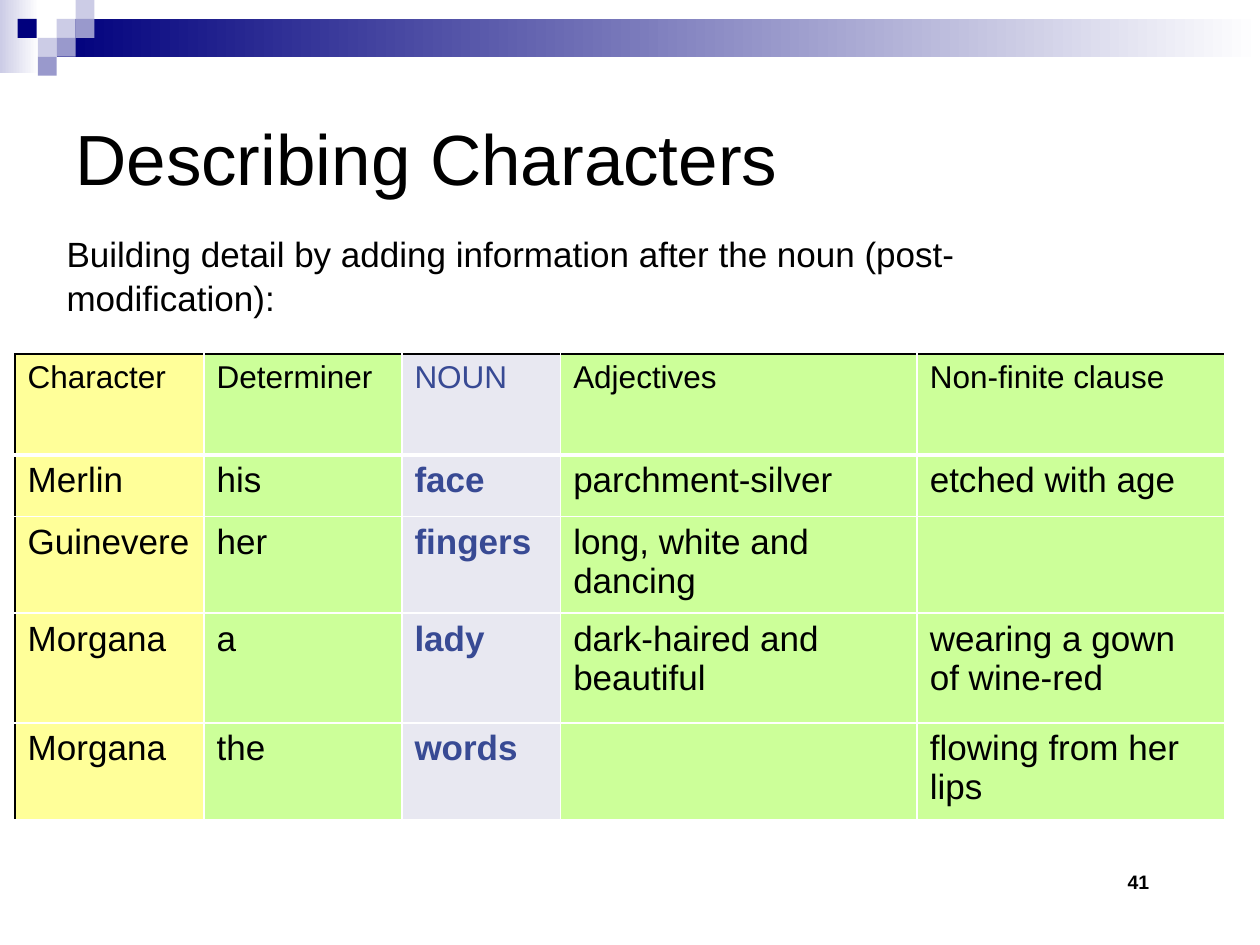
from lxml import etree
from pptx import Presentation
from pptx import util as u
from pptx.dml import color
from pptx.enum import shapes, text
from pptx.oxml import ns

BLACK, WHITE, NAVY, LILAC, LAVENDER = "000000", "FFFFFF", "00007D", "9999CC", "CCCCE6"
NOUN_BLUE, NOUN_FILL, YELLOW, GREEN = "384A94", "E8E8F1", "FFFF99", "CCFF99"
NOUN_COLUMN = 2


def rgb(value):
    return color.RGBColor.from_string(value)


class SlideBuilder:
    font_name = "Arial"

    def __init__(self, slide):
        self.slide = slide

    def style(self, paragraph, size, colour=BLACK, bold=False):
        font = paragraph.font
        font.name, font.size, font.bold = self.font_name, u.Pt(size), bold
        font.color.rgb = rgb(colour)

    def rectangle(self, left, top, width, height, *colours):
        shape = self.slide.shapes.add_shape(
            shapes.MSO_SHAPE.RECTANGLE, *map(u.Inches, (left, top, width, height)))
        shape.shadow.inherit = False
        shape.line.fill.background()
        if len(colours) == 1:
            shape.fill.solid()
            shape.fill.fore_color.rgb = rgb(colours[0])
        else:
            shape.fill.gradient()
            shape.fill.gradient_angle = 0
            for stop, colour in zip(shape.fill.gradient_stops, colours):
                stop.color.rgb = rgb(colour)

    def textbox(self, left, top, width, height, wording, size, bold=False,
                anchor=text.MSO_ANCHOR.TOP, line_spacing=1.0):
        shape = self.slide.shapes.add_textbox(*map(u.Inches, (left, top, width, height)))
        frame = shape.text_frame
        frame.word_wrap = True
        frame.vertical_anchor = anchor
        paragraph = frame.paragraphs[0]
        paragraph.text = wording
        paragraph.line_spacing = line_spacing
        self.style(paragraph, size, bold=bold)

    def borders(self, cell, edges):
        properties = cell._tc.get_or_add_tcPr()
        for index, (side, (colour, width)) in enumerate(edges.items()):
            line = etree.Element(ns.qn("a:ln" + side), w=str(u.Pt(width)))
            fill = etree.SubElement(line, ns.qn("a:solidFill"))
            etree.SubElement(fill, ns.qn("a:srgbClr"), val=colour)
            properties.insert(index, line)

    def table(self, left, top, column_widths, row_heights, rows):
        frame = self.slide.shapes.add_table(
            len(rows), len(column_widths), u.Inches(left), u.Inches(top),
            u.Inches(sum(column_widths)), u.Inches(sum(row_heights)))
        table = frame.table
        table.first_row = table.horz_banding = False
        for column, width in zip(table.columns, column_widths):
            column.width = u.Inches(width)
        for row, height in zip(table.rows, row_heights):
            row.height = u.Inches(height)
        fills = [YELLOW, GREEN, NOUN_FILL, GREEN, GREEN]
        for row_index, row in enumerate(rows):
            header = row_index == 0
            for column_index, wording in enumerate(row):
                noun = column_index == NOUN_COLUMN
                cell = table.cell(row_index, column_index)
                cell.fill.solid()
                cell.fill.fore_color.rgb = rgb(fills[column_index])
                self.borders(cell, {
                    "L": (BLACK if column_index == 0 else WHITE, 1),
                    "R": (WHITE, 1),
                    "T": (BLACK if header else WHITE, 1),
                    "B": (WHITE, 3 if header else 1)})
                paragraph = cell.text_frame.paragraphs[0]
                paragraph.text = wording
                self.style(paragraph, 18 if header else 20,
                           NOUN_BLUE if noun else BLACK, noun and not header)


def main():
    presentation = Presentation()
    presentation.slide_width, presentation.slide_height = u.Inches(10), u.Inches(7.5)
    builder = SlideBuilder(presentation.slides.add_slide(presentation.slide_layouts[6]))

    builder.rectangle(0, 0, 0.31, 0.58, LAVENDER, WHITE)
    builder.rectangle(0.45, 0.15, 9.55, 0.3, NAVY, WHITE)
    squares = [
        (0.45, 0.15, LAVENDER), (0.6, 0, LAVENDER), (0.6, 0.15, LILAC),
        (0.3, 0.3, LAVENDER), (0.14, 0.15, NAVY), (0.45, 0.3, LILAC), (0.3, 0.45, LILAC)]
    for left, top, colour in squares:
        builder.rectangle(left, top, 0.15, 0.15, colour)

    builder.textbox(0.5, 0.5, 9, 1.5, "Describing Characters", 40.6,
                    anchor=text.MSO_ANCHOR.MIDDLE)
    builder.table(0.12, 2.81, [1.5, 1.57, 1.26, 2.83, 2.44], [0.8, 0.49, 0.71, 0.87, 0.72], [
        ["Character", "Determiner", "NOUN", "Adjectives", "Non-finite clause"],
        ["Merlin", "his", "face", "parchment-silver", "etched with age"],
        ["Guinevere", "her", "fingers", "long, white and dancing", ""],
        ["Morgana", "a", "lady", "dark-haired and beautiful", "wearing a gown of wine-red"],
        ["Morgana", "the", "words", "", "flowing from her lips"]])
    builder.textbox(8.85, 6.74, 1.15, 0.4, "41", 11.1, bold=True,
                    anchor=text.MSO_ANCHOR.BOTTOM)
    builder.textbox(
        0.43, 1.78, 8.9, 0.44,
        "Building detail by adding information after the noun (post-modification):", 20,
        line_spacing=1.05)
    presentation.save("out.pptx")


if __name__ == "__main__":
    main()
